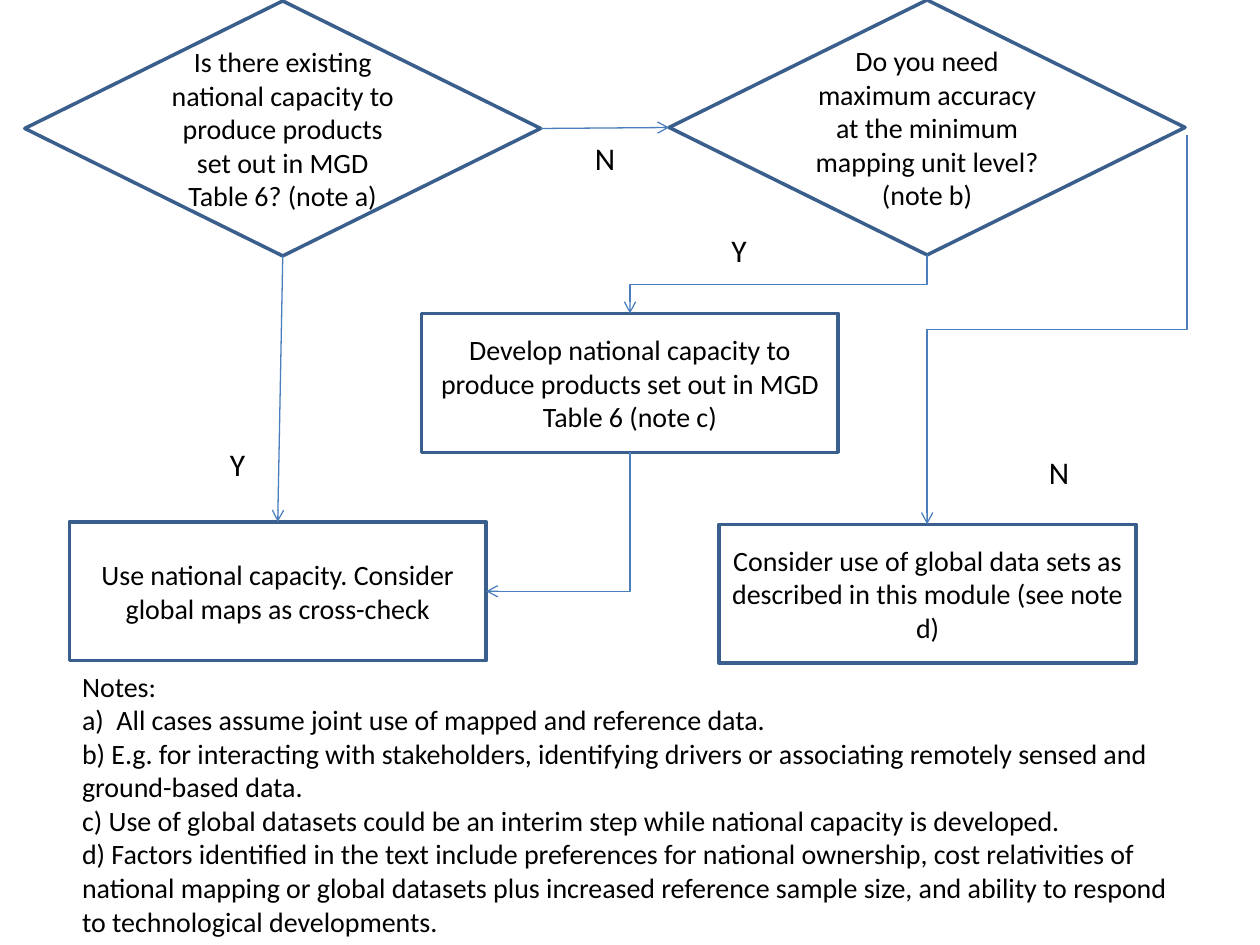
from lxml.etree import SubElement
from pptx import Presentation
from pptx.dml.color import RGBColor as Rgb
from pptx.enum.shapes import MSO_CONNECTOR as Link, MSO_SHAPE as Preset
from pptx.enum.text import MSO_ANCHOR as Anchor, MSO_AUTO_SIZE as AutoSize, PP_ALIGN as Align
from pptx.oxml.ns import qn
from pptx.util import Cm, Pt

THEME = {
    "font": "Calibri", "text": Rgb(0, 0, 0), "body": Pt(16), "label": Pt(18),
    "outline": Rgb(0x3A, 0x5F, 0x8C), "outline_width": Pt(2),
    "arrow": Rgb(0x4B, 0x7E, 0xBC), "arrow_width": Pt(0.75),
}
SIZES = {Preset.FLOWCHART_DECISION: (10.4, 5.14), Preset.RECTANGLE: (8.4, 2.8)}
LABEL_SIZE = (1.6, 1.24)
TOP, LEFT, BOTTOM, RIGHT = range(4)

STEPS = {
    "capacity": (Preset.FLOWCHART_DECISION, 0.5, 0.02,
                 "Is there existing national capacity to produce products set out in MGD Table 6? (note a)"),
    "accuracy": (Preset.FLOWCHART_DECISION, 13.49, 0,
                 "Do you need maximum accuracy at the minimum mapping unit level? (note b)"),
    "use": (Preset.RECTANGLE, 1.4, 10.52,
            "Use national capacity. Consider global maps as cross-check"),
    "global": (Preset.RECTANGLE, 14.5, 10.57,
               "Consider use of global data sets as described in this module (see note d)"),
    "develop": (Preset.RECTANGLE, 8.5, 6.32,
                "Develop national capacity to produce products set out in MGD Table 6 (note c)"),
}
STRAIGHT = [("capacity", BOTTOM, "use", TOP), ("capacity", RIGHT, "accuracy", LEFT)]
BENT = [("accuracy", BOTTOM, "develop", TOP, "bentConnector3"),
        ("develop", BOTTOM, "use", RIGHT, "bentConnector2")]
GLOBAL_ROUTE = (23.93, 2.72, 18.69, 10.57)
ANSWERS = [("Y", 3.99, 8.74), ("N", 11.4, 2.57), ("N", 20.55, 8.89), ("Y", 14.1, 4.42)]
NOTES_AREA = (1.4, 13.36, 22.91, 5.69)
NOTES = [
    "Notes:",
    "a)  All cases assume joint use of mapped and reference data.",
    "b) E.g. for interacting with stakeholders, identifying drivers or associating remotely sensed and ground-based data.",
    "c) Use of global datasets could be an interim step while national capacity is developed.",
    "d) Factors identified in the text include preferences for national ownership, cost relativities of national mapping or global datasets plus increased reference sample size, and ability to respond to technological developments.",
]


def format_text(frame, size, align, anchor):
    frame.word_wrap = True
    frame.auto_size = AutoSize.NONE
    frame.vertical_anchor = anchor
    for paragraph in frame.paragraphs:
        paragraph.alignment = align
        for run in paragraph.runs:
            run.font.name = THEME["font"]
            run.font.size = size
            run.font.color.rgb = THEME["text"]


def add_step(slide, preset, left, top, wording):
    step = slide.shapes.add_shape(preset, Cm(left), Cm(top), *map(Cm, SIZES[preset]))
    step.shadow.inherit = False
    step.fill.background()
    step.line.color.rgb = THEME["outline"]
    step.line.width = THEME["outline_width"]
    step.text_frame.text = wording
    format_text(step.text_frame, THEME["body"], Align.CENTER, Anchor.MIDDLE)
    return step


def add_arrow(slide, kind, route=(0, 0, 0, 0)):
    arrow = slide.shapes.add_connector(kind, *map(Cm, route))
    arrow.line.color.rgb = THEME["arrow"]
    arrow.line.width = THEME["arrow_width"]
    properties = arrow._element.spPr
    SubElement(properties.find(qn("a:ln")), qn("a:tailEnd"), type="arrow")
    SubElement(properties, qn("a:effectLst"))
    return arrow


def glue(arrow, start, start_side, end, end_side):
    arrow.begin_connect(start, start_side)
    arrow.end_connect(end, end_side)


def turn_downward(arrow, bend):
    across, down = arrow.width, arrow.height
    arrow.left += (across - down) // 2
    arrow.top += (down - across) // 2
    arrow.width, arrow.height = down, across
    properties = arrow._element.spPr
    properties.xfrm.flipH = False
    properties.xfrm.set("rot", "5400000")
    properties.find(qn("a:prstGeom")).set("prst", bend)


def add_answer(slide, answer, left, top):
    label = slide.shapes.add_textbox(Cm(left), Cm(top), *map(Cm, LABEL_SIZE))
    label.text_frame.text = answer
    format_text(label.text_frame, THEME["label"], Align.CENTER, Anchor.MIDDLE)


def fill_notes(notes):
    notes.left, notes.top, notes.width, notes.height = map(Cm, NOTES_AREA)
    notes.text_frame.text = "\n".join(NOTES)
    format_text(notes.text_frame, THEME["body"], Align.LEFT, Anchor.TOP)
    for paragraph in notes.text_frame.paragraphs:
        paragraph.space_before = Pt(0)
        settings = paragraph._p.get_or_add_pPr()
        settings.set("marL", "0")
        settings.set("indent", "0")
        SubElement(settings, qn("a:buNone"))


def main():
    deck = Presentation()
    deck.slide_width, deck.slide_height = Cm(25.4), Cm(19.05)
    slide = deck.slides.add_slide(deck.slide_layouts[1])
    title = slide.shapes.title._element
    title.getparent().remove(title)
    fill_notes(slide.placeholders[1])

    steps = {key: add_step(slide, *step) for key, step in STEPS.items()}
    for start, start_side, end, end_side in STRAIGHT:
        glue(add_arrow(slide, Link.STRAIGHT), steps[start], start_side, steps[end], end_side)
    for start, start_side, end, end_side, bend in BENT:
        arrow = add_arrow(slide, Link.ELBOW)
        glue(arrow, steps[start], start_side, steps[end], end_side)
        turn_downward(arrow, bend)
    turn_downward(add_arrow(slide, Link.ELBOW, GLOBAL_ROUTE), "bentConnector3")
    for answer in ANSWERS:
        add_answer(slide, *answer)
    deck.save("out.pptx")


if __name__ == "__main__":
    main()
